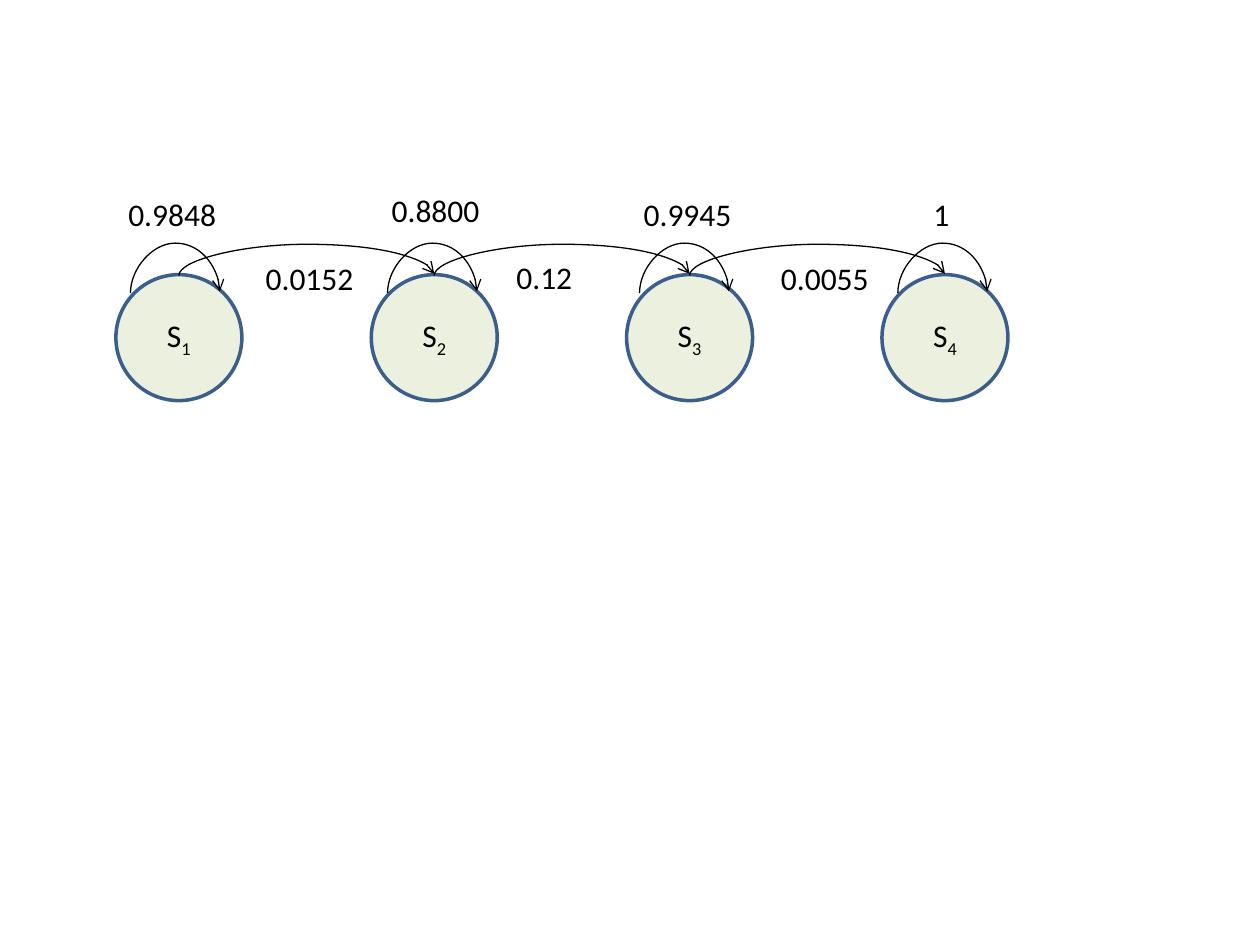
import pptx
import pptx.util
import pptx.dml.color
import pptx.enum.shapes
import pptx.enum.text
import pptx.oxml.ns
from lxml import etree

Inches, Pt = pptx.util.Inches, pptx.util.Pt
RGBColor = pptx.dml.color.RGBColor
qn = pptx.oxml.ns.qn

# Content: state index, centre of its loop, loop probability, label left, top, width
STATES = [
    ("1", 1.39, "0.9848", 0.92, 1.50, 0.90),
    ("2", 3.43, "0.8800", 3.01, 1.47, 0.90),
    ("3", 5.43, "0.9945", 5.01, 1.50, 0.90),
    ("4", 7.48, "1", 7.31, 1.50, 0.33),
]
# Probability of moving to the next state, label left, top, width
TRANSITIONS = [
    ("0.0152", 2.01, 2.01, 0.90),
    ("0.12", 4.00, 2.00, 0.65),
    ("0.0055", 6.10, 2.01, 0.90),
]

FONT = "Calibri"
BLACK = RGBColor(0, 0, 0)
STATE_FILL = RGBColor(0xEB, 0xF1, 0xDE)
STATE_LINE = RGBColor(0x3A, 0x5F, 0x8C)

# Chain geometry in inches
DIAMETER = 1
STATE_TOP = 2.18
FIRST_LEFT, LAST_LEFT = 0.92, 7
PITCH = (LAST_LEFT - FIRST_LEFT) / (len(STATES) - 1)
LOOP_SPAN, LOOP_BASE, LOOP_RISE = 0.71, 2.32, 0.4
STEP_RISE = 0.25
LABEL_HEIGHT = 0.4


def add_run(paragraph, text):
    run = paragraph.add_run()
    run.text = text
    run.font.name = FONT
    run.font.size = Pt(18)
    run.font.color.rgb = BLACK
    return run


def add_state(slide, index, left):
    shape = slide.shapes.add_shape(
        pptx.enum.shapes.MSO_SHAPE.OVAL,
        Inches(left), Inches(STATE_TOP), Inches(DIAMETER), Inches(DIAMETER))
    shape.shadow.inherit = False
    shape.fill.solid()
    shape.fill.fore_color.rgb = STATE_FILL
    shape.line.color.rgb = STATE_LINE
    shape.line.width = Pt(2)
    shape.text_frame.vertical_anchor = pptx.enum.text.MSO_ANCHOR.MIDDLE
    paragraph = shape.text_frame.paragraphs[0]
    paragraph.alignment = pptx.enum.text.PP_ALIGN.CENTER
    add_run(paragraph, "S")
    subscript = add_run(paragraph, index)
    subscript.font._element.set("baseline", "-25000")


def add_arc(slide, center, base, span, rise):
    """Draw an arrow bulging upwards: a thin curved connector turned by 90 degrees."""
    thickness = Pt(1)
    left = Inches(center) - thickness // 2
    top = Inches(base - span / 2)
    connector = slide.shapes.add_connector(
        pptx.enum.shapes.MSO_CONNECTOR.CURVE,
        left + thickness, top + Inches(span), left, top)
    connector.line.color.rgb = BLACK
    connector.line.width = Pt(0.75)
    properties = connector.element.spPr
    properties.find(qn("a:xfrm")).set("rot", "5400000")
    geometry = properties.find(qn("a:prstGeom"))
    adjustments = geometry.find(qn("a:avLst"))
    if adjustments is None:
        adjustments = etree.SubElement(geometry, qn("a:avLst"))
    bulge = round(Inches(rise) / thickness * 100000)
    etree.SubElement(adjustments, qn("a:gd"), name="adj1", fmla=f"val {bulge}")
    etree.SubElement(properties.find(qn("a:ln")), qn("a:tailEnd"), type="arrow")
    etree.SubElement(properties, qn("a:effectLst"))


def add_label(slide, text, left, top, width):
    box = slide.shapes.add_textbox(
        Inches(left), Inches(top), Inches(width), Inches(LABEL_HEIGHT))
    box.text_frame.word_wrap = False
    box.text_frame.auto_size = pptx.enum.text.MSO_AUTO_SIZE.SHAPE_TO_FIT_TEXT
    add_run(box.text_frame.paragraphs[0], text)


def main():
    presentation = pptx.Presentation()
    presentation.slide_width, presentation.slide_height = Inches(10), Inches(7.5)
    slide = presentation.slides.add_slide(presentation.slide_layouts[6])

    # States
    for position, state in enumerate(STATES):
        add_state(slide, state[0], FIRST_LEFT + position * PITCH)

    # Loops back to the same state
    for state in STATES:
        add_arc(slide, state[1], LOOP_BASE, LOOP_SPAN, LOOP_RISE)

    # Arrows to the next state
    for position in range(len(TRANSITIONS)):
        center = FIRST_LEFT + DIAMETER / 2 + (position + 0.5) * PITCH
        add_arc(slide, center, STATE_TOP, PITCH, STEP_RISE)

    # Probabilities
    for label in [state[2:] for state in STATES] + TRANSITIONS:
        add_label(slide, *label)

    presentation.save("out.pptx")


if __name__ == "__main__":
    main()
